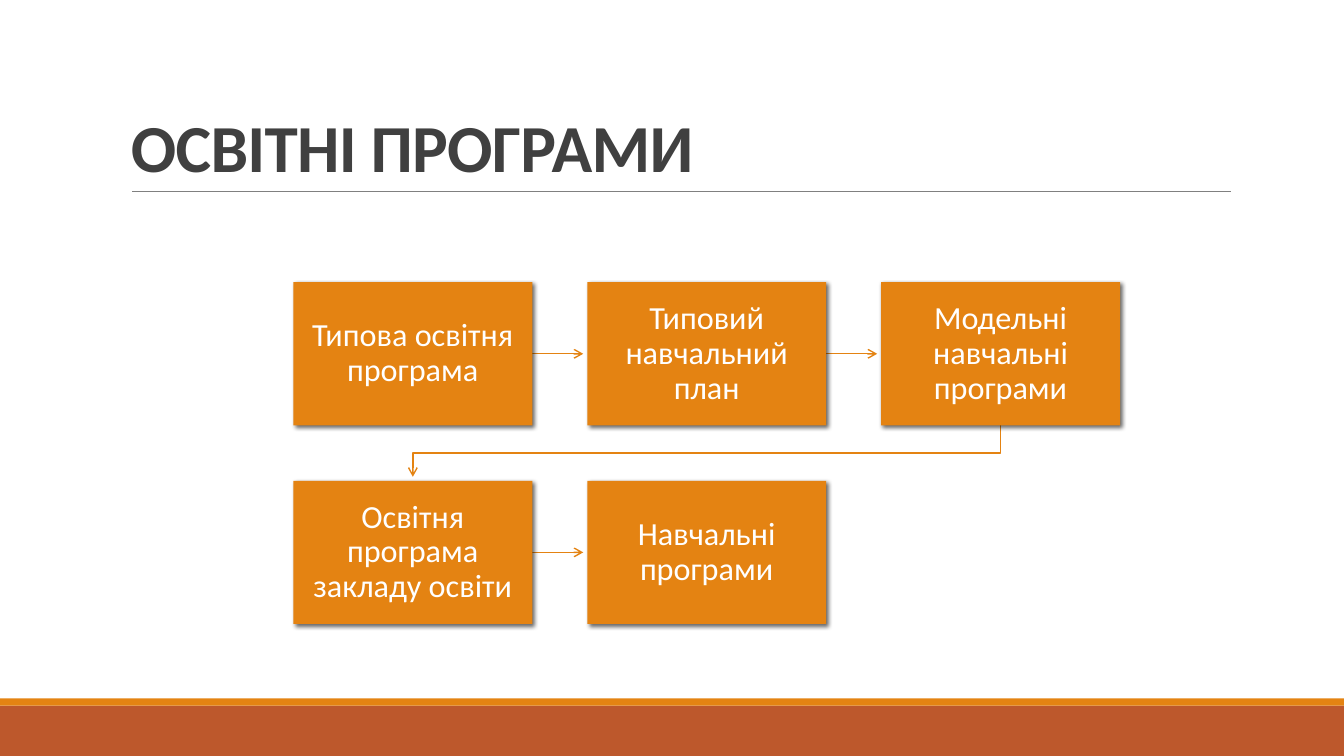
"""Build a slide showing the sequence of educational programmes."""
from dataclasses import dataclass

from lxml import etree
from pptx import Presentation
from pptx.dml.color import RGBColor
from pptx.enum.shapes import MSO_CONNECTOR, MSO_SHAPE
from pptx.enum.text import MSO_ANCHOR, PP_ALIGN
from pptx.oxml.ns import qn
from pptx.util import Inches, Pt

RECT = MSO_SHAPE.RECTANGLE
STRAIGHT = MSO_CONNECTOR.STRAIGHT
MIDDLE, BOTTOM = MSO_ANCHOR.MIDDLE, MSO_ANCHOR.BOTTOM
CENTER, LEFT = PP_ALIGN.CENTER, PP_ALIGN.LEFT

COLORS = {
    "orange": "E48312",
    "rust": "BD582C",
    "rule": "808080",
    "title": "404040",
    "white": "FFFFFF",
    "shadow": "000000",
}
FONT = "Calibri"
GRID_LEFT, GRID_TOP = 2.91, 2.8
PITCH_X, PITCH_Y = 2.915, 1.97
BOX_W, BOX_H = 2.37, 1.42
ARROW_GAP = 0.04


@dataclass
class Step:
    text: str
    col: int
    row: int

    @property
    def left(self) -> float:
        return GRID_LEFT + self.col * PITCH_X

    @property
    def top(self) -> float:
        return GRID_TOP + self.row * PITCH_Y

    @property
    def center_x(self) -> float:
        return self.left + BOX_W / 2

    @property
    def center_y(self) -> float:
        return self.top + BOX_H / 2


@dataclass
class Band:
    top: float
    height: float
    color: str


STEPS = [
    Step("Типова освітня програма", 0, 0),
    Step("Типовий навчальний план", 1, 0),
    Step("Модельні навчальні програми", 2, 0),
    Step("Освітня програма закладу освіти", 0, 1),
    Step("Навчальні програми", 1, 1),
]
BANDS = [Band(7, 0.5, "rust"), Band(6.93, 0.07, "orange")]


def rgb(name: str) -> RGBColor:
    return RGBColor.from_string(COLORS[name])


def add_rect(s, left: float, top: float, width: float, height: float, color: str):
    sp = s.shapes.add_shape(RECT, Inches(left), Inches(top), Inches(width), Inches(height))
    sp.fill.solid()
    sp.fill.fore_color.rgb = rgb(color)
    sp.line.fill.background()
    sp.shadow.inherit = False
    return sp


def style_text(tf, text: str, size: float, color: str, align, anchor, spacing: float):
    tf.text = text
    tf.word_wrap = True
    tf.vertical_anchor = anchor
    p = tf.paragraphs[0]
    p.alignment = align
    p.line_spacing = spacing
    r = p.runs[0]
    r.font.name = FONT
    r.font.size = Pt(size)
    r.font.color.rgb = rgb(color)
    return r


def style_line(sp, color: str, width: float, arrow: bool) -> None:
    sp.line.color.rgb = rgb(color)
    sp.line.width = Pt(width)
    if arrow:
        ln = sp.line._get_or_add_ln()
        etree.SubElement(ln, qn("a:tailEnd"), type="arrow")


def add_line(s, x1: float, y1: float, x2: float, y2: float,
             color: str, width: float, arrow: bool = False) -> None:
    cx = s.shapes.add_connector(STRAIGHT, Inches(x1), Inches(y1), Inches(x2), Inches(y2))
    style_line(cx, color, width, arrow)
    etree.SubElement(cx._element.spPr, qn("a:effectLst"))


def add_return_arrow(s, start: Step, end: Step) -> None:
    bottom = start.top + BOX_H
    turn = (bottom + end.top) / 2
    points = [(start.center_x, bottom), (start.center_x, turn),
              (end.center_x, turn), (end.center_x, end.top - ARROW_GAP)]
    emu = [(Inches(x), Inches(y)) for x, y in points]
    fb = s.shapes.build_freeform(*emu[0])
    fb.add_line_segments(emu[1:], close=False)
    sp = fb.convert_to_shape()
    sp.fill.background()
    style_line(sp, "orange", 1, True)
    sp.shadow.inherit = False


def add_arrow(s, start: Step, end: Step) -> None:
    if start.row == end.row:
        add_line(s, start.left + BOX_W, start.center_y,
                 end.left - ARROW_GAP, end.center_y, "orange", 1, True)
    else:
        add_return_arrow(s, start, end)


def add_shadow(sp) -> None:
    effects = sp._element.spPr.find(qn("a:effectLst"))
    shadow = etree.SubElement(effects, qn("a:outerShdw"), blurRad=str(Pt(3)),
                              dist=str(Pt(2)), dir=str(45 * 60000), rotWithShape="0")
    color = etree.SubElement(shadow, qn("a:srgbClr"), val=COLORS["shadow"])
    etree.SubElement(color, qn("a:alpha"), val="60000")


def add_step(s, step: Step) -> None:
    sp = add_rect(s, step.left, step.top, BOX_W, BOX_H, "orange")
    add_shadow(sp)
    tf = sp.text_frame
    tf.margin_left = tf.margin_right = tf.margin_top = tf.margin_bottom = Inches(0.18)
    style_text(tf, step.text, 23, "white", CENTER, MIDDLE, 0.9)


def add_title(s, text: str) -> None:
    sp = s.shapes.add_textbox(Inches(1.2), Inches(0.31), Inches(11), Inches(1.59))
    r = style_text(sp.text_frame, text, 48, "title", LEFT, BOTTOM, 0.85)
    r.font.bold = True
    r._r.get_or_add_rPr().set("spc", "-50")


def main() -> None:
    prs = Presentation()
    prs.slide_width, prs.slide_height = Inches(13.33), Inches(7.5)
    s = prs.slides.add_slide(prs.slide_layouts[6])
    for band in BANDS:
        add_rect(s, 0, band.top, 13.33, band.height, band.color)
    add_line(s, 1.31, 1.9, 12.21, 1.9, "rule", 0.5)
    add_title(s, "ОСВІТНІ ПРОГРАМИ")
    for start, end in zip(STEPS, STEPS[1:]):
        add_arrow(s, start, end)
    for step in STEPS:
        add_step(s, step)
    prs.save("out.pptx")


if __name__ == "__main__":
    main()
